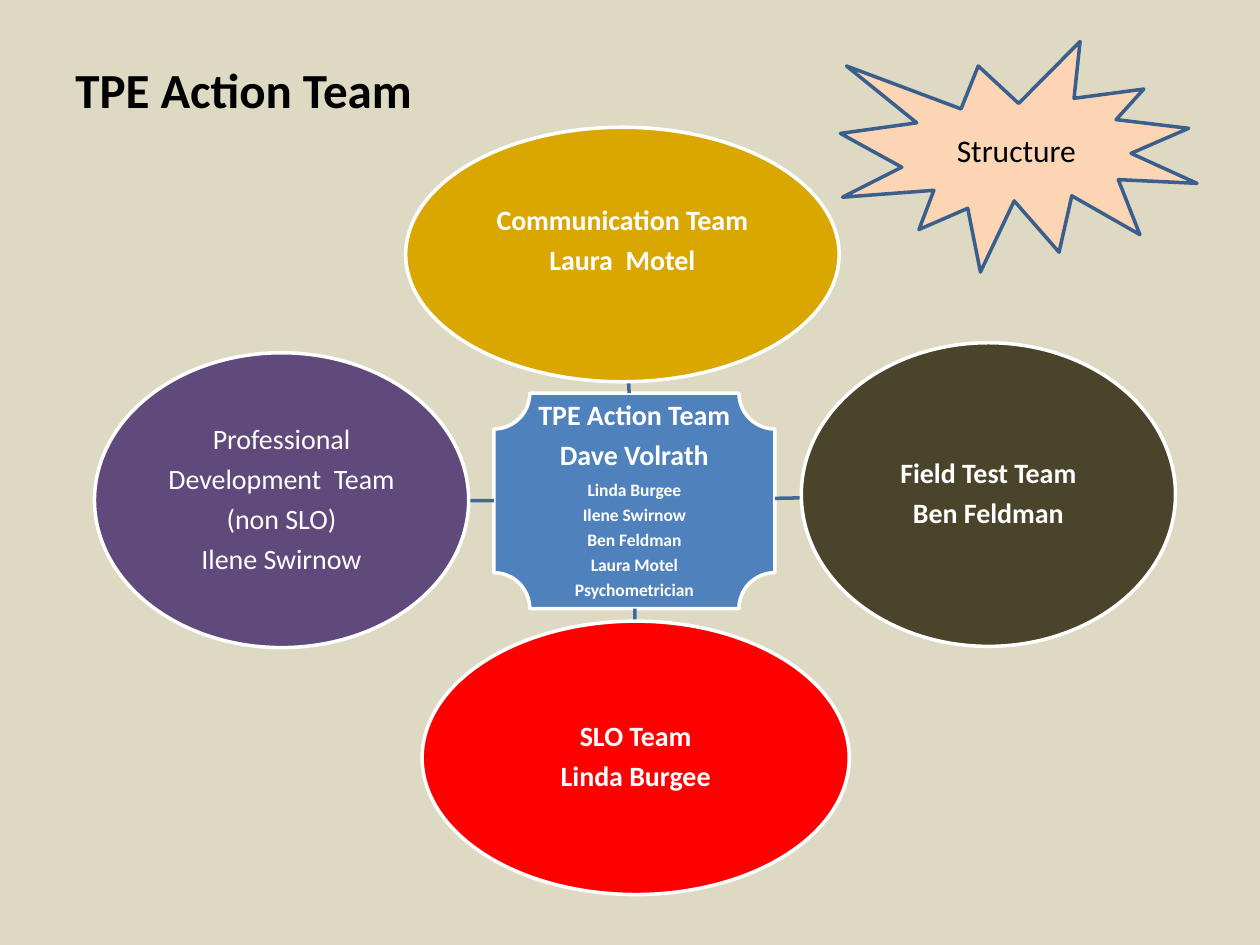
from dataclasses import dataclass
from math import hypot

from lxml.etree import SubElement
from pptx import Presentation
from pptx.dml.color import RGBColor
from pptx.enum.shapes import MSO_CONNECTOR, MSO_SHAPE
from pptx.enum.text import MSO_ANCHOR, PP_ALIGN
from pptx.oxml.ns import qn
from pptx.util import Inches, Pt

SAND = RGBColor(0xDD, 0xD9, 0xC3)
WHITE = RGBColor(0xFF, 0xFF, 0xFF)
BLACK = RGBColor(0x00, 0x00, 0x00)
BLUE = RGBColor(0x4F, 0x81, 0xBD)
SPOKE_BLUE = RGBColor(0x3F, 0x67, 0x97)
BURST_BLUE = RGBColor(0x3A, 0x5F, 0x8C)
GOLD = RGBColor(0xDA, 0xA6, 0x00)
OLIVE = RGBColor(0x4A, 0x45, 0x2A)
RED = RGBColor(0xFF, 0x00, 0x00)
PURPLE = RGBColor(0x60, 0x4A, 0x7B)
PEACH = RGBColor(0xFC, 0xD5, 0xB5)

FONT = "Calibri"
LINE_WIDTH = Pt(2)


@dataclass
class Box:
    left: float
    top: float
    width: float
    height: float

    def inside(self, left, top, width, height):
        return Box(self.left + left * self.width, self.top + top * self.height,
                   width * self.width, height * self.height)

    def centre(self):
        return self.left + self.width / 2, self.top + self.height / 2

    def frame(self):
        return [Inches(side) for side in (self.left, self.top, self.width, self.height)]


SLIDE = Box(0, 0, 10, 7.5)


def at(left, top, width, height):
    return SLIDE.inside(left / SLIDE.width, top / SLIDE.height,
                        width / SLIDE.width, height / SLIDE.height)


HUB_BOX = at(3.92, 3.12, 2.23, 1.71)
HUB_LINES = [("TPE Action Team", 16), ("Dave Volrath", 16)] + [
    (name, 10) for name in ("Linda Burgee", "Ilene Swirnow", "Ben Feldman",
                            "Laura Motel", "Psychometrician")]

TEAMS = [
    (at(3.22, 1.01, 3.44, 2.02), GOLD, True, 0.22,
     ["Communication Team", "Laura  Motel"]),
    (at(6.36, 2.72, 2.97, 2.41), OLIVE, True, 0.01,
     ["Field Test Team", "Ben Feldman"]),
    (at(3.35, 4.93, 3.39, 2.17), RED, True, 0.01,
     ["SLO Team", "Linda Burgee"]),
    (at(0.75, 2.8, 2.97, 2.34), PURPLE, False, 0.01,
     ["Professional", "Development  Team", "(non SLO)", "Ilene Swirnow"]),
]


def style_span(span, size, color, bold):
    span.font.name = FONT
    span.font.size = Pt(size)
    span.font.bold = bold
    span.font.color.rgb = color


def add_filled_shape(page, kind, box, fill, line):
    shape = page.shapes.add_shape(kind, *box.frame())
    shape.shadow.inherit = False
    shape.fill.solid()
    shape.fill.fore_color.rgb = fill
    shape.line.color.rgb = line
    shape.line.width = LINE_WIDTH
    shape.text_frame.vertical_anchor = MSO_ANCHOR.MIDDLE
    return shape


def add_node(page, kind, box, fill, lines, bold=True, bottom_margin=0.01):
    frame = add_filled_shape(page, kind, box, fill, WHITE).text_frame
    frame.margin_left = frame.margin_right = frame.margin_top = Inches(0.01)
    frame.margin_bottom = Inches(bottom_margin)
    frame.text = "\n".join(text for text, size in lines)
    for para, (text, size) in zip(frame.paragraphs, lines):
        para.alignment = PP_ALIGN.CENTER
        para.line_spacing = 0.9
        para.space_after = Pt(0.35 * size)
        style_span(para.runs[0], size, WHITE, bold)


def add_spoke(page, hub, team):
    hub_x, hub_y = hub.centre()
    team_x, team_y = team.centre()
    dx, dy = team_x - hub_x, team_y - hub_y
    start = 1 / max(abs(dx) / (hub.width / 2), abs(dy) / (hub.height / 2))
    end = 1 - 1 / hypot(dx / (team.width / 2), dy / (team.height / 2))
    points = [Inches(value) for share in (start, end)
              for value in (hub_x + share * dx, hub_y + share * dy)]
    spoke = page.shapes.add_connector(MSO_CONNECTOR.STRAIGHT, *points)
    spoke.line.color.rgb = SPOKE_BLUE
    spoke.line.width = LINE_WIDTH
    SubElement(spoke.element.spPr, qn("a:effectLst"))


def add_team_diagram(page):
    add_node(page, MSO_SHAPE.PLAQUE, HUB_BOX, BLUE, HUB_LINES)
    for box, fill, bold, bottom_margin, names in TEAMS:
        add_spoke(page, HUB_BOX, box)
        add_node(page, MSO_SHAPE.OVAL, box, fill,
                 [(name, 16) for name in names], bold, bottom_margin)


def add_heading(page, box):
    heading = page.shapes.add_textbox(*box.frame())
    heading.text_frame.word_wrap = False
    heading.text_frame.text = "TPE Action Team"
    style_span(heading.text_frame.paragraphs[0].runs[0], 28, BLACK, True)


def add_burst(page, box):
    burst = add_filled_shape(page, MSO_SHAPE.EXPLOSION1, box, PEACH, BURST_BLUE)
    burst.text_frame.text = "Structure"
    para = burst.text_frame.paragraphs[0]
    para.alignment = PP_ALIGN.CENTER
    style_span(para.runs[0], 18, BLACK, False)


def main():
    deck = Presentation()
    deck.slide_width = Inches(SLIDE.width)
    deck.slide_height = Inches(SLIDE.height)
    page = deck.slides.add_slide(deck.slide_layouts[6])
    page.background.fill.solid()
    page.background.fill.fore_color.rgb = SAND
    add_team_diagram(page)
    add_heading(page, at(0.5, 0.42, 2.9, 0.57))
    add_burst(page, at(6.67, 0.33, 2.83, 1.83))
    deck.save("out.pptx")


if __name__ == "__main__":
    main()
